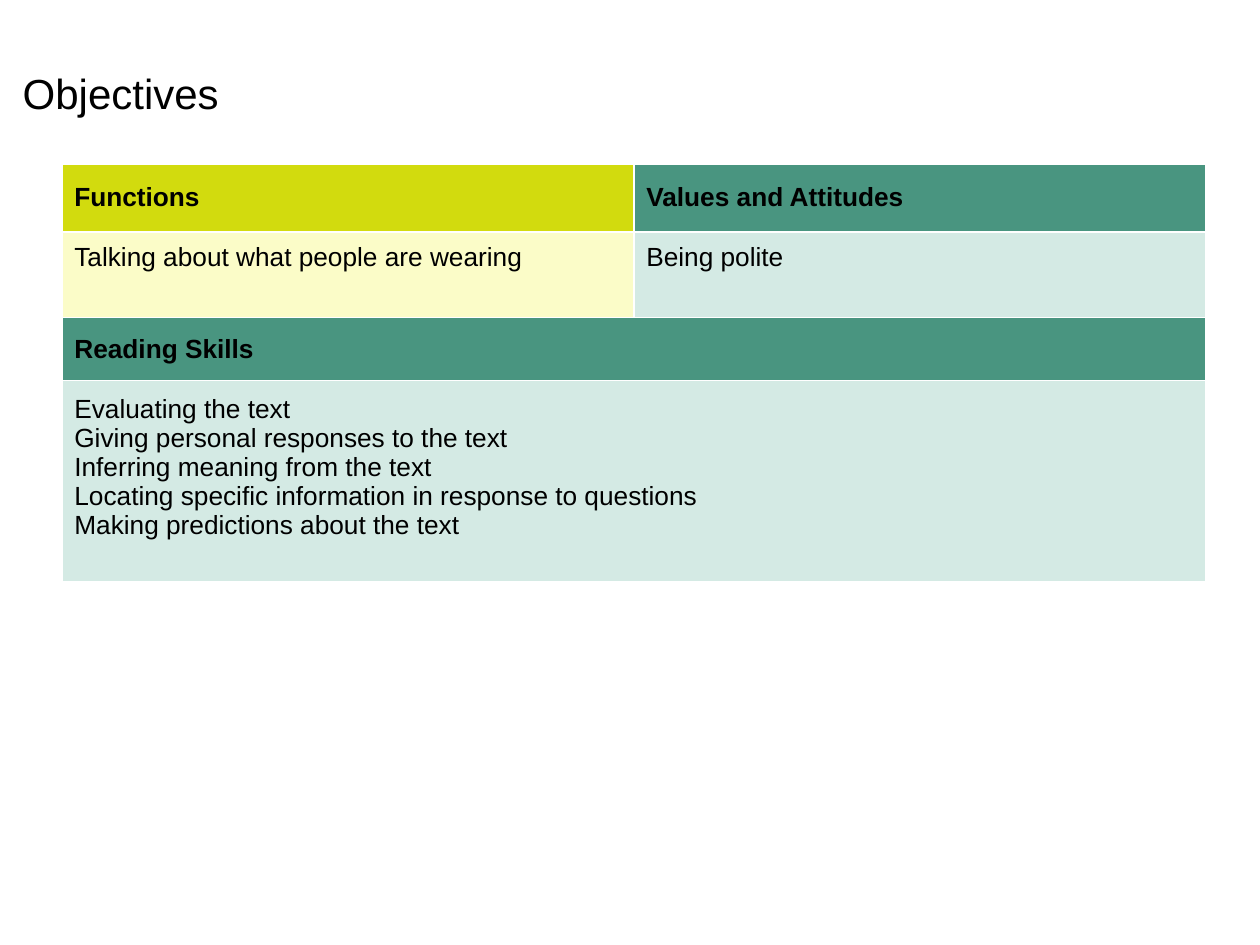
from dataclasses import dataclass

from pptx import Presentation
from pptx import util as u
from pptx.dml.color import RGBColor
from pptx.enum import text


@dataclass(frozen=True)
class Theme:
    font: str = "Arial"
    ink: str = "000000"
    lime: str = "D2DB0E"
    pale_lime: str = "FBFCC8"
    green: str = "499580"
    pale_green: str = "D4EAE4"
    title_size: int = 24
    body_size: int = 15


class SlideBuilder:
    """Holds the theme and the current slide."""

    def __init__(self, prs, theme):
        self.theme = theme
        self.slide = prs.slides.add_slide(prs.slide_layouts[5])

    def set_text(self, tf, lines, size, bold=False, **fmt):
        tf.text = "\n".join(lines)
        font = {"name": self.theme.font, "size": u.Pt(size), "bold": bold}
        for p in tf.paragraphs:
            for key, value in {"alignment": text.PP_ALIGN.LEFT, **fmt}.items():
                setattr(p, key, value)
            for r in p.runs:
                for key, value in font.items():
                    setattr(r.font, key, value)
                r.font.color.rgb = RGBColor.from_string(self.theme.ink)

    def title(self, line, left, top, width, height):
        sp = self.slide.shapes.title
        box = {"left": left, "top": top, "width": width, "height": height}
        for key, value in box.items():
            setattr(sp, key, u.Inches(value))
        tf = sp.text_frame
        frame = {"word_wrap": False, "vertical_anchor": text.MSO_ANCHOR.MIDDLE,
                 "auto_size": text.MSO_AUTO_SIZE.SHAPE_TO_FIT_TEXT}
        for key, value in frame.items():
            setattr(tf, key, value)
        self.set_text(tf, [line], self.theme.title_size)

    def table(self, left, top, widths, heights):
        box = [u.Inches(v) for v in (left, top, sum(widths), sum(heights))]
        tbl = self.slide.shapes.add_table(len(heights), len(widths), *box).table
        tbl.horz_banding = False
        for col, width in zip(tbl.columns, widths):
            col.width = u.Inches(width)
        for row, height in zip(tbl.rows, heights):
            row.height = u.Inches(height)
        return tbl

    def cell(self, cell, lines, fill, bold=False, middle=True, bottom=0.05, **fmt):
        cell.fill.solid()
        cell.fill.fore_color.rgb = RGBColor.from_string(fill)
        anchor = text.MSO_ANCHOR.MIDDLE if middle else text.MSO_ANCHOR.TOP
        layout = {"vertical_anchor": anchor, "margin_bottom": u.Inches(bottom)}
        for key, value in layout.items():
            setattr(cell, key, value)
        self.set_text(cell.text_frame, lines, self.theme.body_size, bold, **fmt)


def main():
    prs = Presentation()
    prs.slide_width, prs.slide_height = u.Inches(10), u.Inches(7.5)
    theme = Theme()
    s = SlideBuilder(prs, theme)
    s.title("Objectives", 0.08, 0.48, 1.77, 0.51)

    tbl = s.table(0.49, 1.3, [4.54, 4.54], [0.54, 0.68, 0.5, 1.6])
    topics = [
        ("Functions", "Talking about what people are wearing", theme.lime, theme.pale_lime),
        ("Values and Attitudes", "Being polite", theme.green, theme.pale_green),
    ]
    for col, (heading, detail, dark, pale) in enumerate(topics):
        s.cell(tbl.cell(0, col), [heading], dark, bold=True)
        s.cell(tbl.cell(1, col), [detail], pale, middle=False, line_spacing=1.15)

    for row in (2, 3):
        tbl.cell(row, 0).merge(tbl.cell(row, 1))
    skills = [
        "Evaluating the text",
        "Giving personal responses to the text",
        "Inferring meaning from the text",
        "Locating specific information in response to questions",
        "Making predictions about the text",
    ]
    s.cell(tbl.cell(2, 0), ["Reading Skills"], theme.green, bold=True)
    s.cell(tbl.cell(3, 0), skills, theme.pale_green, bottom=0.27)
    prs.save("out.pptx")


if __name__ == "__main__":
    main()
